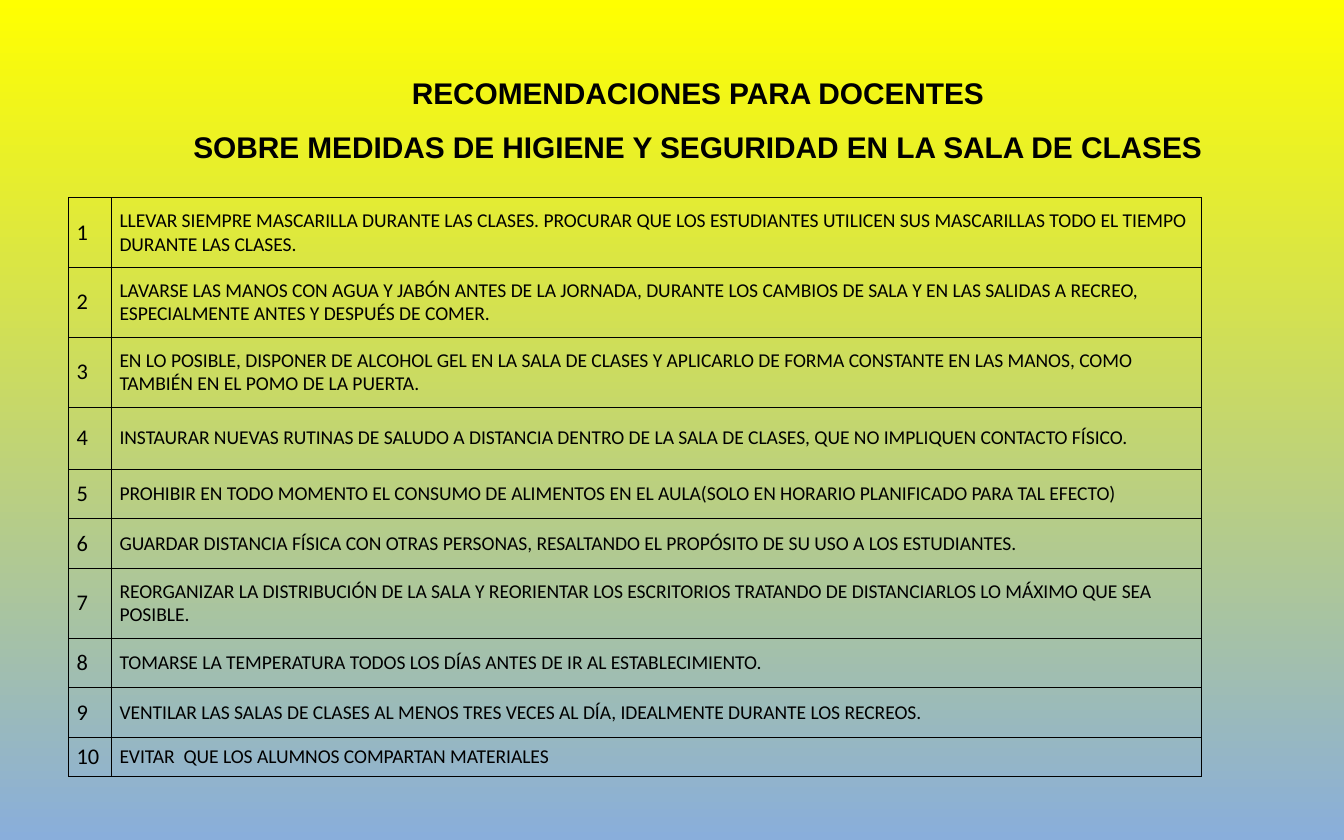
import pptx
import pptx.dml.color
import pptx.enum.text
import pptx.oxml
import pptx.oxml.ns
import pptx.util
from pptx.util import Inches

BLACK = "000000"
TITLE_LINES = [
    "RECOMENDACIONES PARA DOCENTES",
    "SOBRE MEDIDAS DE HIGIENE Y SEGURIDAD EN LA SALA DE CLASES",
]
RECOMMENDATIONS = [
    (0.52, "LLEVAR SIEMPRE MASCARILLA DURANTE LAS CLASES. PROCURAR QUE LOS ESTUDIANTES "
           "UTILICEN SUS MASCARILLAS TODO EL TIEMPO DURANTE LAS CLASES."),
    (0.52, "LAVARSE LAS MANOS CON AGUA Y JABÓN ANTES DE LA JORNADA, DURANTE LOS CAMBIOS DE "
           "SALA Y EN LAS SALIDAS A RECREO, ESPECIALMENTE ANTES Y DESPUÉS DE COMER."),
    (0.52, "EN LO POSIBLE, DISPONER DE ALCOHOL GEL EN LA SALA DE CLASES Y APLICARLO DE FORMA "
           "CONSTANTE EN LAS MANOS, COMO TAMBIÉN EN EL POMO DE LA PUERTA."),
    (0.46, "INSTAURAR NUEVAS RUTINAS DE SALUDO A DISTANCIA DENTRO DE LA SALA DE CLASES, QUE "
           "NO IMPLIQUEN CONTACTO FÍSICO."),
    (0.37, "PROHIBIR EN TODO MOMENTO EL CONSUMO DE ALIMENTOS EN EL AULA(SOLO EN HORARIO "
           "PLANIFICADO PARA TAL EFECTO)"),
    (0.37, "GUARDAR DISTANCIA FÍSICA CON OTRAS PERSONAS, RESALTANDO EL PROPÓSITO DE SU USO A "
           "LOS ESTUDIANTES."),
    (0.52, "REORGANIZAR LA DISTRIBUCIÓN DE LA SALA Y REORIENTAR LOS ESCRITORIOS TRATANDO DE "
           "DISTANCIARLOS LO MÁXIMO QUE SEA POSIBLE."),
    (0.37, "TOMARSE LA TEMPERATURA TODOS LOS DÍAS ANTES DE IR AL ESTABLECIMIENTO."),
    (0.37, "VENTILAR LAS SALAS DE CLASES AL MENOS TRES VECES AL DÍA, IDEALMENTE DURANTE LOS "
           "RECREOS."),
    (0.29, "EVITAR  QUE LOS ALUMNOS COMPARTAN MATERIALES"),
]


def color(hex_code):
    """Return the RGB colour of a hex string."""
    return pptx.dml.color.RGBColor.from_string(hex_code)


def add_run(p, text, font, size, bold=False):
    """Add one black run to a paragraph."""
    r = p.add_run()
    r.text = text
    r.font.name = font
    r.font.size = pptx.util.Pt(size)
    r.font.bold = bold
    r.font.color.rgb = color(BLACK)


def paint_background(s, top, bottom):
    """Fill the slide with a vertical two-colour gradient."""
    fill = s.background.fill
    fill.gradient()
    fill.gradient_angle = 270
    for stop, hex_code in zip(fill.gradient_stops, (top, bottom)):
        stop.color.rgb = color(hex_code)


def place_title(s, left, top, width, height):
    """Place the two-line heading in the title placeholder."""
    sp = s.shapes.title
    sp.left, sp.top, sp.width, sp.height = map(Inches, (left, top, width, height))
    tf = sp.text_frame
    tf.word_wrap = False
    tf.auto_size = pptx.enum.text.MSO_AUTO_SIZE.SHAPE_TO_FIT_TEXT
    tf.vertical_anchor = pptx.enum.text.MSO_ANCHOR.MIDDLE
    for i, line in enumerate(TITLE_LINES):
        p = tf.add_paragraph() if i else tf.paragraphs[0]
        p.alignment = pptx.enum.text.PP_ALIGN.CENTER
        p.line_spacing = 1.5
        p.space_before = pptx.util.Pt(0)
        add_run(p, line, "Arial", 16, bold=True)


def set_borders(cell, hex_code, width):
    """Draw a solid line on the four sides of a cell."""
    props = cell._tc.get_or_add_tcPr()
    for i, side in enumerate(("lnL", "lnR", "lnT", "lnB")):
        props.insert(i, pptx.oxml.parse_xml(
            f'<a:{side} {pptx.oxml.ns.nsdecls("a")} w="{pptx.util.Pt(width)}">'
            f'<a:solidFill><a:srgbClr val="{hex_code}"/></a:solidFill></a:{side}>'))


def fill_cell(cell, text, size):
    """Write and format one transparent, bordered cell."""
    cell.fill.background()
    cell.vertical_anchor = pptx.enum.text.MSO_ANCHOR.MIDDLE
    cell.margin_left = cell.margin_right = Inches(0.06)
    cell.margin_top = cell.margin_bottom = Inches(0.03)
    add_run(cell.text_frame.paragraphs[0], text, "Calibri", size)
    set_borders(cell, BLACK, 0.48)


def place_recommendations(s, left, top, width, height):
    """Place the numbered table of recommendations."""
    frame = s.shapes.add_table(len(RECOMMENDATIONS), 2, *map(Inches, (left, top, width, height)))
    table = frame.table
    table.first_row = table.horz_banding = False
    number_width = 0.32
    table.columns[0].width = Inches(number_width)
    table.columns[1].width = Inches(width - number_width)
    for i, (row_height, text) in enumerate(RECOMMENDATIONS):
        table.rows[i].height = Inches(row_height)
        fill_cell(table.cell(i, 0), str(i + 1), 12)
        fill_cell(table.cell(i, 1), text, 10.5)


def main():
    """Build and save the slide."""
    prs = pptx.Presentation()
    prs.slide_width, prs.slide_height = Inches(10), Inches(6.25)
    s = prs.slides.add_slide(prs.slide_layouts[5])
    paint_background(s, "FFFF00", "89AEDB")
    place_title(s, 1.3, 0.37, 7.79, 0.91)
    place_recommendations(s, 0.51, 1.47, 8.43, 4.33)
    prs.save("out.pptx")


if __name__ == "__main__":
    main()
